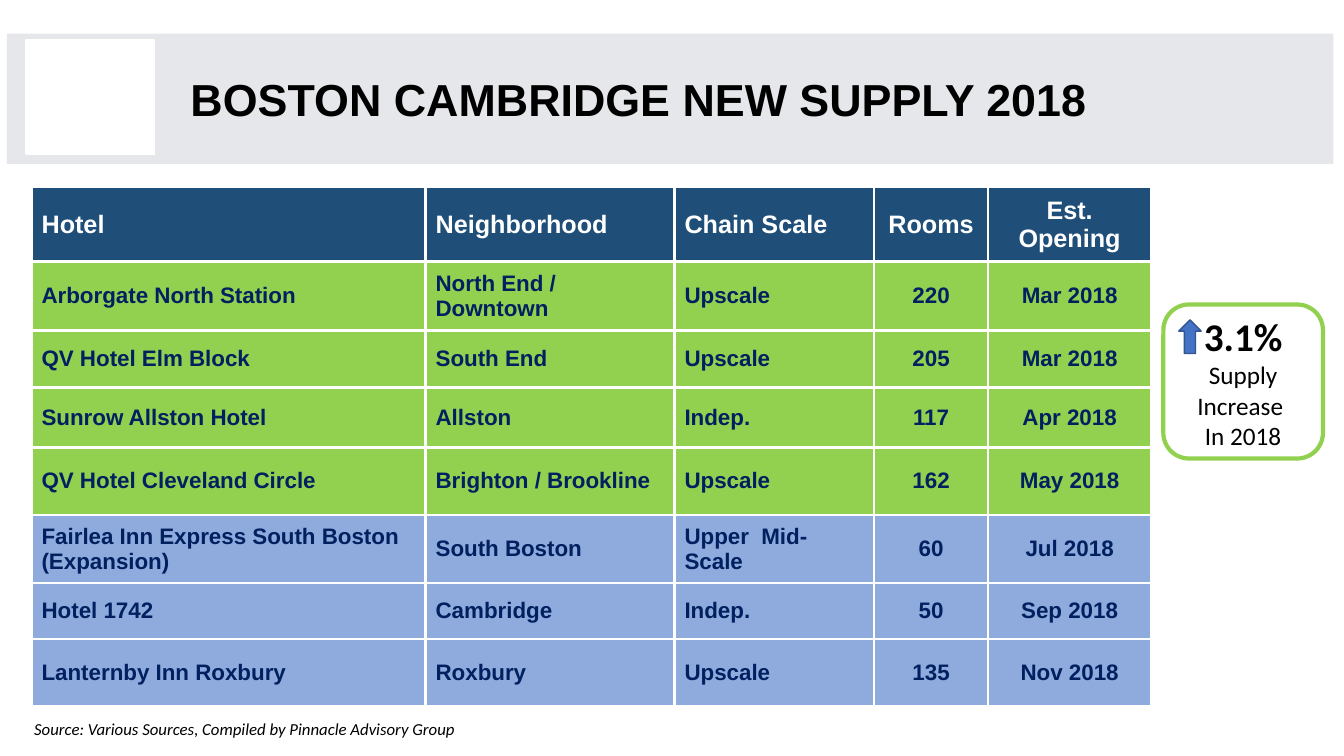
from lxml.etree import SubElement
from pptx import Presentation
from pptx.dml.color import RGBColor
from pptx.enum.shapes import MSO_SHAPE as Shape
from pptx.enum.text import MSO_ANCHOR as Anchor, PP_ALIGN as Align
from pptx.oxml.ns import qn
from pptx.util import Pt

HEADER, OPENED, PLANNED = "1F4E79", "92D050", "8FAADC"
COLUMN_WIDTHS = [281.5, 177.8, 142.6, 81.4, 116.6]
ROW_HEIGHTS = [53.5, 49, 41, 42.5, 48.5, 48.5, 40, 48.5]
HOTELS = [
    (HEADER, "Hotel", "Neighborhood", "Chain Scale", "Rooms", "Est. Opening"),
    (OPENED, "Arborgate North Station", "North End / Downtown", "Upscale", "220", "Mar 2018"),
    (OPENED, "QV Hotel Elm Block", "South End", "Upscale", "205", "Mar 2018"),
    (OPENED, "Sunrow Allston Hotel", "Allston", "Indep.", "117", "Apr 2018"),
    (OPENED, "QV Hotel Cleveland Circle", "Brighton / Brookline", "Upscale", "162", "May 2018"),
    (PLANNED, "Fairlea Inn Express South Boston (Expansion)", "South Boston",
     "Upper  Mid-Scale", "60", "Jul 2018"),
    (PLANNED, "Hotel 1742", "Cambridge", "Indep.", "50", "Sep 2018"),
    (PLANNED, "Lanternby Inn Roxbury", "Roxbury", "Upscale", "135", "Nov 2018"),
]


def color(value):
    """Turn a hex string into a colour."""
    return RGBColor.from_string(value)


def write(para, text, ink, align=Align.LEFT, **formats):
    """Write one formatted run in a paragraph."""
    para.alignment = align
    span = para.add_run()
    span.text = text
    for name, value in formats.items():
        setattr(span.font, name, value)
    span.font.color.rgb = color(ink)


def add_block(page, kind, box, fill=None, line=None, weight=1):
    """Add a preset shape with an optional fill and outline."""
    block = page.shapes.add_shape(kind, *map(Pt, box))
    block.shadow.inherit = False
    for part, value in ((block.fill, fill), (block.line.fill, line)):
        if value:
            part.solid()
            part.fore_color.rgb = color(value)
        else:
            part.background()
    if line:
        block.line.width = Pt(weight)
    return block


def add_text(page, box, text, **formats):
    """Add a text box with one black paragraph and return the paragraph."""
    frame = page.shapes.add_textbox(*map(Pt, box)).text_frame
    frame.word_wrap = True
    para = frame.paragraphs[0]
    write(para, text, "000000", **formats)
    return para


def add_banner(page, box):
    """Draw the title band with its white square."""
    left, top, width, height = box
    add_block(page, Shape.RECTANGLE, box, "E6E7EA")
    add_block(page, Shape.RECTANGLE, (left + 13.5, top + 4.5, 92, 81.5), "FFFFFF", "FFFFFF")
    title = add_text(page, (left + 124, top + 28, width - 130, 46),
                     "BOSTON CAMBRIDGE NEW SUPPLY 2018",
                     name="Arial", size=Pt(32), bold=True)
    title.line_spacing = 0.9


def add_borders(cell):
    """Give a cell white borders, placed ahead of its fill."""
    properties = cell._tc.get_or_add_tcPr()
    for index, side in enumerate(("lnL", "lnR", "lnT", "lnB")):
        border = SubElement(properties, qn(f"a:{side}"), w=str(Pt(2.25)))
        solid = SubElement(border, qn("a:solidFill"))
        SubElement(solid, qn("a:srgbClr"), val="FFFFFF")
        properties.insert(index, border)


def add_hotel_table(page, box):
    """Add the table of new hotels."""
    table = page.shapes.add_table(len(HOTELS), len(COLUMN_WIDTHS), *map(Pt, box)).table
    table.horz_banding = False
    for column, width in zip(table.columns, COLUMN_WIDTHS):
        column.width = Pt(width)
    for row, height, (fill, *texts) in zip(table.rows, ROW_HEIGHTS, HOTELS):
        row.height = Pt(height)
        size, ink = (18, "FFFFFF") if fill == HEADER else (16, "002060")
        for index, (cell, text) in enumerate(zip(row.cells, texts)):
            cell.fill.solid()
            cell.fill.fore_color.rgb = color(fill)
            add_borders(cell)
            cell.vertical_anchor = Anchor.MIDDLE
            cell.margin_left = cell.margin_right = Pt(7.2)
            cell.margin_top = cell.margin_bottom = Pt(5)
            write(cell.text_frame.paragraphs[0], text, ink,
                  Align.CENTER if index > 2 else Align.LEFT,
                  name="Arial", size=Pt(size), bold=True)


def add_callout(page, box):
    """Draw the supply increase box with its up arrow."""
    left, top = box[:2]
    frame = add_block(page, Shape.ROUNDED_RECTANGLE, box, line=OPENED, weight=3).text_frame
    frame.word_wrap = True
    frame.vertical_anchor = Anchor.MIDDLE
    lines = [("3.1%", 28, True), ("Supply Increase ", 18, False), ("In 2018", 18, False)]
    for index, (text, size, bold) in enumerate(lines):
        para = frame.add_paragraph() if index else frame.paragraphs[0]
        write(para, text, "000000", Align.CENTER, name="Calibri", size=Pt(size), bold=bold)
    add_block(page, Shape.UP_ARROW, (left + 11, top + 11, 16, 24), "4472C4", "325491")


def main():
    """Build and save the slide."""
    deck = Presentation()
    deck.slide_width, deck.slide_height = Pt(960), Pt(540)
    page = deck.slides.add_slide(deck.slide_layouts[6])
    add_banner(page, (5, 24, 947.5, 93))
    add_hotel_table(page, (22.5, 133.5, sum(COLUMN_WIDTHS), sum(ROW_HEIGHTS)))
    add_callout(page, (831, 217.5, 114, 110))
    add_text(page, (17.3, 510, 376, 21.6),
             "Source: Various Sources, Compiled by Pinnacle Advisory Group",
             name="Calibri", size=Pt(12), italic=True)
    deck.save("out.pptx")


if __name__ == "__main__":
    main()
